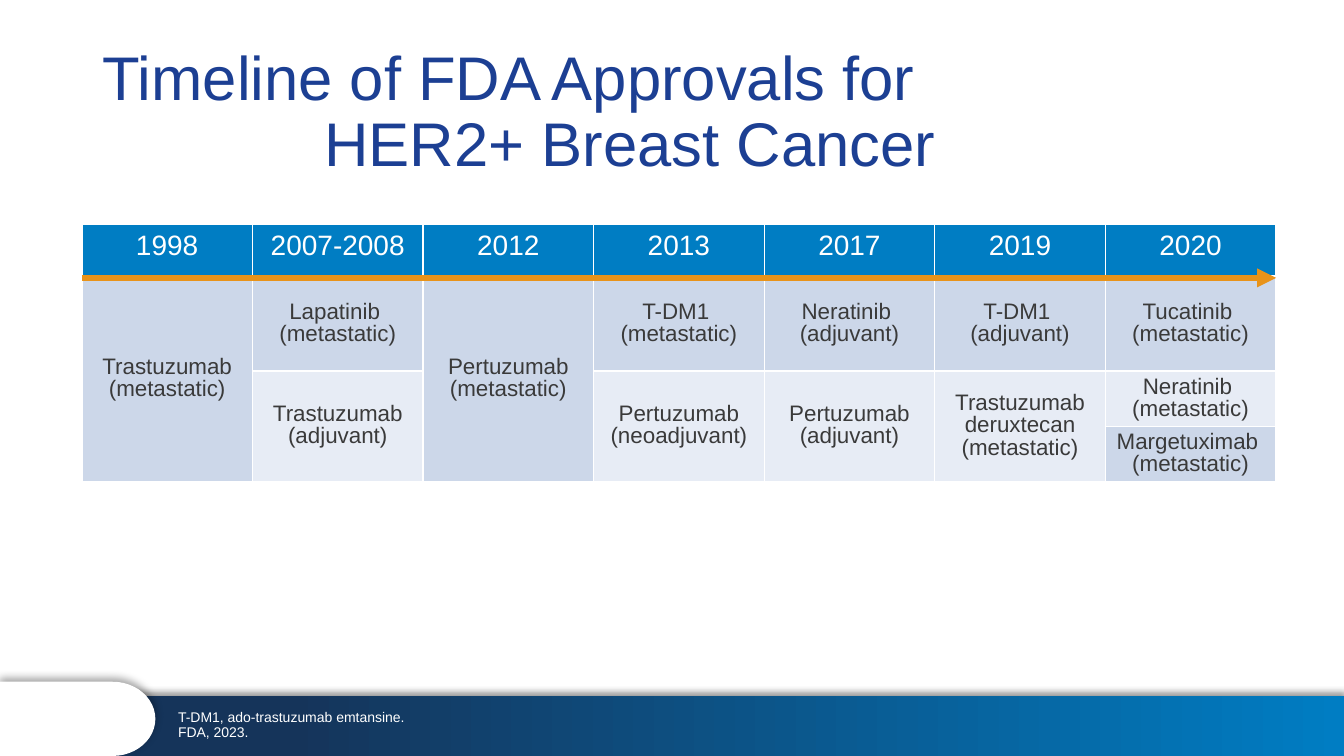
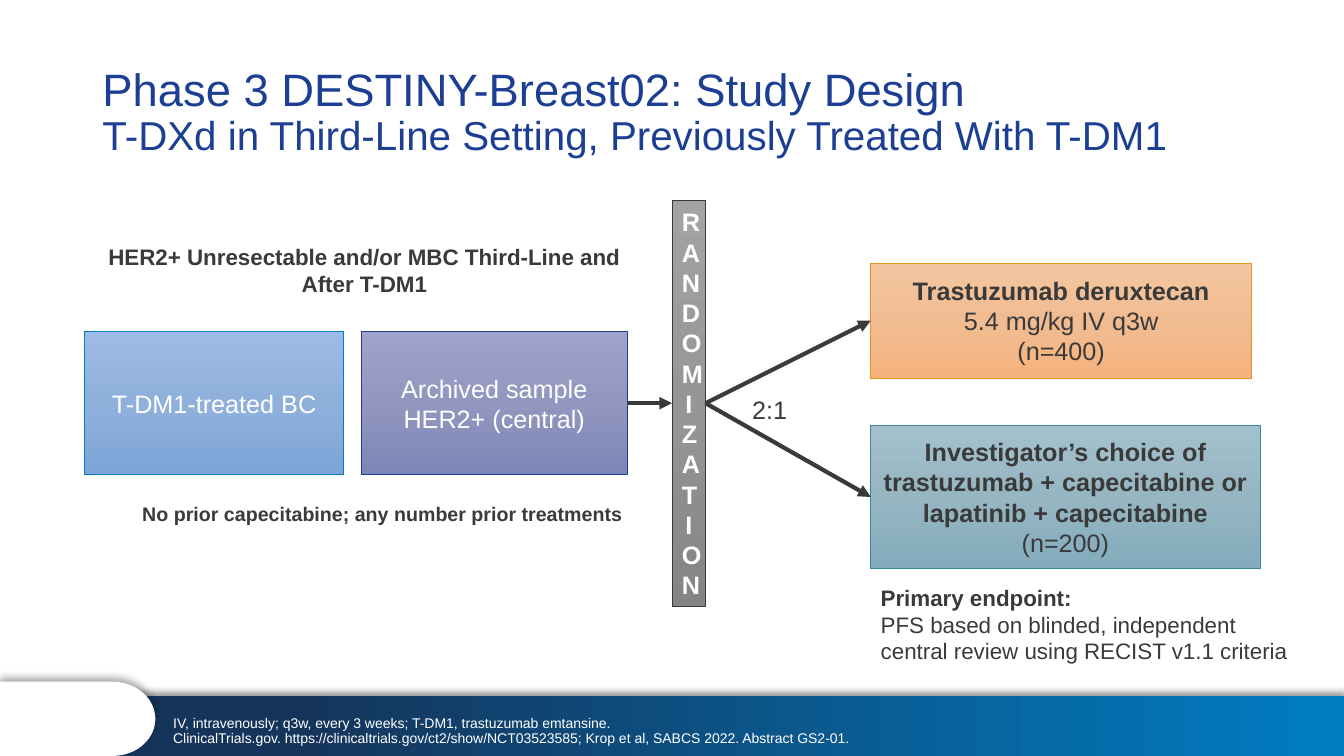
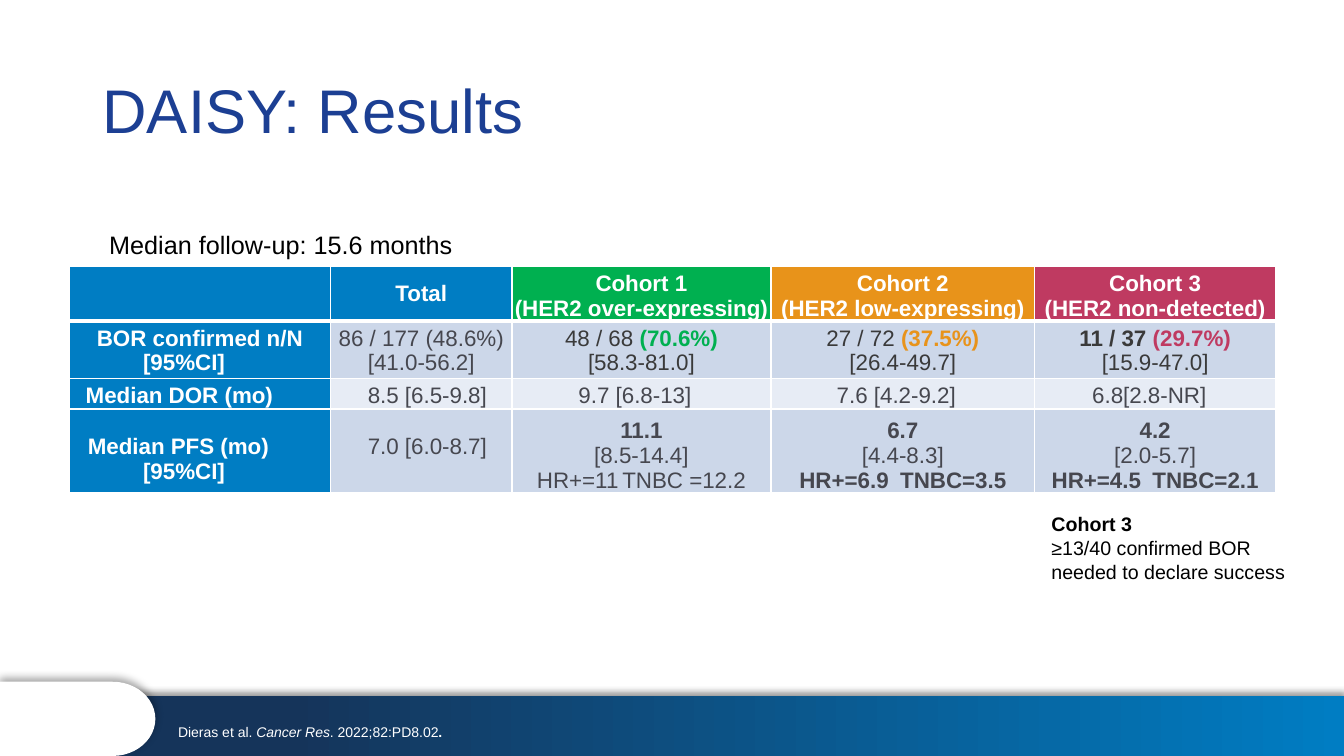
import copy
import math

import pptx
import pptx.dml.color
import pptx.enum.shapes
import pptx.enum.text
import pptx.oxml
import pptx.oxml.ns
import pptx.util

Pt = pptx.util.Pt
RGB = pptx.dml.color.RGBColor
ALIGN = pptx.enum.text.PP_ALIGN
ANCHOR = pptx.enum.text.MSO_ANCHOR
SHAPE = pptx.enum.shapes.MSO_SHAPE
qn = pptx.oxml.ns.qn

# Shared look
FONT = "Arial"
WHITE = RGB(0xFF, 0xFF, 0xFF)
BLACK = RGB(0x00, 0x00, 0x00)
DARK = RGB(0x3A, 0x3A, 0x3A)
SLATE = RGB(0x46, 0x47, 0x4F)
NAVY = RGB(0x1C, 0x3F, 0x93)
MIDNIGHT = RGB(0x15, 0x34, 0x5A)
BLUE = RGB(0x00, 0x7D, 0xC3)
ORANGE = RGB(0xE8, 0x93, 0x1A)
TEAL = RGB(0x3A, 0x86, 0x9B)
GREEN = RGB(0x00, 0xB0, 0x50)
ROSE = RGB(0xBF, 0x3A, 0x61)
ROW_DARK = RGB(0xCC, 0xD7, 0xE9)
ROW_LIGHT = RGB(0xE7, 0xEC, 0xF5)

# Top, middle and bottom colours of the study boxes
ORANGE_FADE = [RGB(0xF4, 0xC6, 0xA0), RGB(0xF1, 0xBC, 0x92), RGB(0xF5, 0xB3, 0x7D)]
TEAL_FADE = [RGB(0xA3, 0xC1, 0xCD), RGB(0x96, 0xB6, 0xC2), RGB(0x83, 0xAC, 0xBC)]
BLUE_FADE = [RGB(0x9D, 0xBB, 0xE5), RGB(0x90, 0xB0, 0xDC), RGB(0x7C, 0xA5, 0xD7)]
VIOLET_FADE = [RGB(0x9E, 0xA4, 0xC9), RGB(0x91, 0x97, 0xBE), RGB(0x7D, 0x85, 0xB7)]
GREY_FADE = [RGB(0xA3, 0xA3, 0xA3), RGB(0x96, 0x96, 0x96), RGB(0x84, 0x84, 0x84)]


def xml(tag, attrs="", inner=""):
    ns = pptx.oxml.ns.nsdecls("a")
    return pptx.oxml.parse_xml(f"<a:{tag} {ns} {attrs}>{inner}</a:{tag}>")


def points(values):
    return [Pt(v) for v in values]


# Text
def add_run(p, text, size, color, bold=False, italic=False):
    """Add text to a paragraph; a newline becomes a line break."""
    for i, part in enumerate(text.split("\n")):
        if i:
            p.add_line_break()
            br = p._p[-1]
        r = p.add_run()
        r.text = part
        r.font.name, r.font.size = FONT, Pt(size)
        r.font.bold, r.font.italic = bold, italic
        r.font.color.rgb = color
        if i:
            br.append(copy.deepcopy(r._r.rPr))


def indent(p, left, first=0):
    pPr = p._p.get_or_add_pPr()
    pPr.set("marL", str(Pt(left)))
    pPr.set("indent", str(Pt(first)))


def write(tf, paragraphs, size, color, align=ALIGN.LEFT, spacing=None, bold=False):
    """A paragraph is a string or a list of strings and (text, changes) runs."""
    for i, runs in enumerate(paragraphs):
        p = tf.paragraphs[0] if i == 0 else tf.add_paragraph()
        p.alignment = align
        if spacing:
            p.line_spacing = spacing
        for run in [runs] if isinstance(runs, str) else runs:
            text, changes = (run, {}) if isinstance(run, str) else run
            add_run(p, text, **{"size": size, "color": color, "bold": bold, **changes})


def add_text(s, at, paragraphs, size, color=DARK, align=ALIGN.LEFT, bold=False,
             inset=True, wrap=True):
    tf = s.shapes.add_textbox(*points(at)).text_frame
    tf.word_wrap = wrap
    if not inset:
        tf.margin_left = tf.margin_right = tf.margin_top = tf.margin_bottom = 0
    write(tf, paragraphs, size, color, align, bold=bold)


# Shapes and lines
def set_gradient(sp, stops, angle):
    inner = "".join(f'<a:gs pos="{pos * 1000}"><a:srgbClr val="{c}"/></a:gs>'
                    for pos, c in stops)
    grad = xml("gradFill", 'rotWithShape="1"',
               f'<a:gsLst>{inner}</a:gsLst><a:lin ang="{angle * 60000}" scaled="0"/>')
    sp.fill.background()
    spPr = sp.element.spPr
    spPr.replace(spPr.find(qn("a:noFill")), grad)


def set_upward_shadow(sp, blur, alpha):
    sp.shadow.inherit = False
    sp.element.spPr.find(qn("a:effectLst")).append(xml(
        "outerShdw",
        f'blurRad="{Pt(blur)}" dist="{Pt(3)}" dir="16200000" algn="b" rotWithShape="0"',
        f'<a:srgbClr val="000000"><a:alpha val="{alpha * 1000}"/></a:srgbClr>'))


def add_box(s, at, fade, edge, paragraphs, color=DARK, bold=False, side=7.2):
    sp = s.shapes.add_shape(SHAPE.RECTANGLE, *points(at))
    sp.shadow.inherit = False
    set_gradient(sp, zip((0, 50, 100), fade), 90)
    sp.line.color.rgb, sp.line.width = edge, Pt(0.5)
    tf = sp.text_frame
    tf.word_wrap = True
    tf.vertical_anchor = ANCHOR.MIDDLE
    tf.margin_left = tf.margin_right = Pt(side)
    write(tf, paragraphs, 18, color, ALIGN.CENTER, bold=bold)
    return sp


def add_arrow(s, start, end, color, width):
    c = s.shapes.add_connector(pptx.enum.shapes.MSO_CONNECTOR.STRAIGHT,
                               *points(start + end))
    c.line.color.rgb, c.line.width = color, Pt(width)
    spPr = c.element.spPr
    spPr.find(qn("a:ln")).append(xml("tailEnd", 'type="triangle"'))
    spPr.append(xml("effectLst"))
    return c


def join(s, left, right):
    """Arrow from the right side of one box to the left side of another."""
    c = add_arrow(s, (0, 0), (0, 0), DARK, 3)
    c.begin_connect(left, 3)
    c.end_connect(right, 1)


# Tables
def set_borders(cell, row):
    widths = {"lnL": 1, "lnR": 1, "lnT": 3 if row == 1 else 1, "lnB": 3 if row == 0 else 1}
    tcPr = cell._tc.get_or_add_tcPr()
    for i, (side, width) in enumerate(widths.items()):
        tcPr.insert(i, xml(side, f'w="{Pt(width)}"',
                           f'<a:solidFill><a:srgbClr val="{WHITE}"/></a:solidFill>'))


def add_table(s, left, top, widths, heights, fill_of):
    table = s.shapes.add_table(len(heights), len(widths), Pt(left), Pt(top),
                               Pt(sum(widths)), Pt(sum(heights))).table
    table.horz_banding = False
    for col, width in zip(table.columns, widths):
        col.width = Pt(width)
    for row, height in zip(table.rows, heights):
        row.height = Pt(height)
    for i in range(len(heights)):
        for j in range(len(widths)):
            cell = table.cell(i, j)
            cell.fill.solid()
            cell.fill.fore_color.rgb = fill_of(i, j)
            set_borders(cell, i)
    return table


# Layout, title and footnote
def prepare_layout(prs):
    layout = prs.slide_layouts[1]
    title, body, *extras = layout.placeholders
    for ph in extras:
        ph.element.getparent().remove(ph.element)
    for ph, at in ((title, (66, 29, 828, 104)), (body, (120, 497.5, 763, 35))):
        ph.left, ph.top, ph.width, ph.height = points(at)
    return layout


def add_band(s, layout):
    """Draw the footer band and its white tab, and hand them to the layout."""
    band = s.shapes.add_shape(SHAPE.RECTANGLE, *points((83, 497, 877, 43)))
    set_gradient(band, [(0, BLUE), (86, MIDNIGHT)], 180)
    set_upward_shadow(band, 4, 40)

    steps = 24
    angles = [math.pi * (i / steps - 0.5) for i in range(steps + 1)]
    curve = [(80.5 + 30.5 * math.cos(a), 513.5 + 26.5 * math.sin(a)) for a in angles]
    fb = s.shapes.build_freeform(0, Pt(487))
    fb.add_line_segments([points(xy) for xy in curve + [(0, 540)]], close=True)
    tab = fb.convert_to_shape()
    tab.fill.solid()
    tab.fill.fore_color.rgb = WHITE
    set_upward_shadow(tab, 6, 34)

    for i, sp in enumerate((band, tab)):
        sp.line.fill.background()
        layout.shapes.element.insert(2 + i, sp.element)


def add_slide(prs, layout, title, footnote):
    s = prs.slides.add_slide(layout)
    tf = s.shapes.title.text_frame
    tf.auto_size = pptx.enum.text.MSO_AUTO_SIZE.NONE
    tf.vertical_anchor = ANCHOR.MIDDLE
    write(tf, [title], 44, NAVY, spacing=0.9)

    tf = s.placeholders[1].text_frame
    tf.auto_size = pptx.enum.text.MSO_AUTO_SIZE.NONE
    tf.vertical_anchor = ANCHOR.BOTTOM
    write(tf, footnote, 10, WHITE, spacing=0.9)
    for p in tf.paragraphs:
        p.space_before = Pt(0)
        indent(p, 0)
        p._p.get_or_add_pPr().append(xml("buNone"))
    return s


# Slide 1
def fill_timeline(s):
    years = ["1998", "2007-2008", "2012", "2013", "2017", "2019", "2020"]
    # Approvals of each year, top to bottom
    approvals = [
        ["Trastuzumab (metastatic)"],
        ["Lapatinib \n(metastatic)", "Trastuzumab (adjuvant)"],
        ["Pertuzumab (metastatic)"],
        ["T-DM1 \n(metastatic)", "Pertuzumab (neoadjuvant)"],
        ["Neratinib \n(adjuvant)", "Pertuzumab (adjuvant)"],
        ["T-DM1 \n(adjuvant)", "Trastuzumab deruxtecan (metastatic)"],
        ["Tucatinib \n(metastatic)", "Neratinib \n(metastatic)",
         "Margetuximab \n(metastatic)"],
    ]
    fills = [BLUE, ROW_DARK, ROW_LIGHT, ROW_DARK]

    def fill_of(i, j):
        return fills[min(i, len(approvals[j]))]

    table = add_table(s, 58.5, 160.5, [121.86] * 7, [37, 67.5, 39.5, 38.5], fill_of)
    for j, (year, drugs) in enumerate(zip(years, approvals)):
        write(table.cell(0, j).text_frame, [year], 20, WHITE, ALIGN.CENTER)
        for i, drug in enumerate(drugs, 1):
            cell = table.cell(i, j)
            if i == len(drugs) and i < 3:
                cell.merge(table.cell(3, j))
            cell.vertical_anchor = ANCHOR.MIDDLE
            write(cell.text_frame, [drug], 16, DARK, ALIGN.CENTER, 0.9)
    add_arrow(s, (58.5, 198.5), (911.5, 198.5), ORANGE, 4.5)


# Slide 2
def fill_study_design(s):
    plain = {"bold": False}
    add_text(s, (94.5, 355, 361.5, 24.5),
             ["No prior capecitabine; any number prior treatments"], 14, bold=True)
    add_text(s, (65.5, 170, 389.5, 46),
             ["HER2+ Unresectable and/or MBC Third-Line and After T-DM1"], 16,
             align=ALIGN.CENTER, bold=True)
    add_text(s, (530, 278, 39.5, 29), ["2:1"], 18, align=ALIGN.CENTER, wrap=False)

    add_box(s, (60.5, 237, 185, 102), BLUE_FADE, BLUE, ["T-DM1-treated BC"], WHITE)
    sample = add_box(s, (258, 237, 190, 102), VIOLET_FADE, NAVY,
                     ["Archived sample HER2+ (central)"], WHITE)
    randomization = add_box(s, (480, 143, 24, 290), GREY_FADE, DARK,
                            list("RANDOMIZATION"), WHITE, bold=True)
    deruxtecan = add_box(s, (622, 188, 272, 82), ORANGE_FADE, ORANGE,
                         ["Trastuzumab deruxtecan",
                          [("5.4 mg/kg IV q3w\n(n=400)", plain)]], bold=True)
    choice = add_box(s, (622, 304, 278, 102), TEAL_FADE, TEAL,
                     ["Investigator’s choice of trastuzumab + capecitabine or",
                      "lapatinib + capecitabine", [("(n=200)", plain)]],
                     bold=True, side=3.6)
    join(s, sample, randomization)
    join(s, randomization, deruxtecan)
    join(s, randomization, choice)

    add_text(s, (622, 413.5, 307.5, 65.5),
             ["Primary endpoint:",
              [("PFS based on blinded, independent central review using "
                "RECIST v1.1 criteria", plain)]], 16, bold=True)


# Slide 3
def fill_results(s):
    heads = [BLUE, BLUE, GREEN, ORANGE, ROSE]

    def fill_of(i, j):
        if i == 0 or j == 0:
            return heads[j if i == 0 else 0]
        return ROW_LIGHT if i == 2 else ROW_DARK

    def strong(text, color=SLATE):
        return (text, {"bold": True, "color": color})

    def dark(text):
        return (text, {"color": DARK})

    rows = [
        [[], ["Total"], ["Cohort 1", "(HER2 over-expressing)"],
         ["Cohort 2", "(HER2 low-expressing)"], ["Cohort 3", "(HER2 non-detected)"]],
        [["BOR confirmed n/N [95%CI]"],
         ["86 / 177 (48.6%)", "[41.0-56.2]"],
         [[dark("48 / 68 "), strong("(70.6%)", GREEN)], [dark("[58.3-81.0]")]],
         [[dark("27 / 72 "), strong("(37.5%)", ORANGE)], [dark("[26.4-49.7]")]],
         [[strong("11 / 37 ", DARK), strong("(29.7%)", ROSE)], [dark("[15.9-47.0]")]]],
        [["Median DOR (mo)"], ["8.5 [6.5-9.8]"], ["9.7 [6.8-13]"], ["7.6 [4.2-9.2]"],
         ["6.8[2.8-NR]"]],
        [["Median PFS (mo) [95%CI]"], ["7.0 [6.0-8.7]"],
         [[strong("11.1")], "[8.5-14.4]", "HR+=11\tTNBC =12.2"],
         [[strong("6.7")], "[4.4-8.3]", [strong("HR+=6.9\tTNBC=3.5")]],
         [[strong("4.2")], "[2.0-5.7]", [strong("HR+=4.5\tTNBC=2.1")]]],
    ]
    # Left and first-line indents of the cells that are not centred
    indents = {(1, 0): (52.5, -33), (2, 0): (11.5, 0), (3, 0): (52.5, -39.5),
               (2, 1): (26.5, 0), (3, 1): (26.5, 0), (2, 2): (47.5, 0),
               (2, 3): (47, 0), (2, 4): (41, 0)}
    # Top margins other than the usual 3.6
    tops = {(0, 1): 10.8, (3, 0): 18, (3, 1): 18, (3, 2): 6.5, (3, 3): 6.5, (3, 4): 6.5}

    table = add_table(s, 49.7, 190, [186.5, 129.5, 185, 188.5, 172], [39, 41, 22, 59],
                      fill_of)
    for i, row in enumerate(rows):
        for j, paragraphs in enumerate(row):
            cell = table.cell(i, j)
            cell.margin_left = cell.margin_right = cell.margin_bottom = 0
            cell.margin_top = Pt(tops.get((i, j), 3.6))
            head = i == 0 or j == 0
            align = ALIGN.LEFT if (i, j) in indents else ALIGN.CENTER
            write(cell.text_frame, paragraphs, 16, WHITE if head else SLATE, align,
                  bold=head)
            for p in cell.text_frame.paragraphs:
                if (i, j) in indents:
                    indent(p, *indents[i, j])
                if "\t" in p.text:
                    p._p.get_or_add_pPr().append(
                        xml("tabLst", "", f'<a:tab pos="{Pt(61)}" algn="l"/>'))

    add_text(s, (78, 163.5, 292, 23), ["Median follow-up: 15.6 months"], 18, BLACK,
             inset=False)
    add_text(s, (751, 366, 171, 52),
             [[strong("Cohort 3", BLACK)], "≥13/40 confirmed BOR needed to declare success"],
             14, BLACK, inset=False)


def main():
    prs = pptx.Presentation()
    prs.slide_width, prs.slide_height = Pt(960), Pt(540)
    layout = prepare_layout(prs)

    s = add_slide(prs, layout, "Timeline of FDA Approvals for\nHER2+ Breast Cancer",
                  ["T-DM1, ado-trastuzumab emtansine.\nFDA, 2023."])
    indent(s.shapes.title.text_frame.paragraphs[0], 158.5, -158.5)
    add_band(s, layout)
    fill_timeline(s)

    s = add_slide(prs, layout,
                  [("Phase 3 DESTINY-Breast02: Study Design", {"size": 32.4}),
                   ("\nT-DXd in Third-Line Setting, Previously Treated With T-DM1",
                    {"size": 28.8})],
                  ["IV, intravenously; q3w, every 3 weeks; T-DM1, trastuzumab emtansine.",
                   "ClinicalTrials.gov. https://clinicaltrials.gov/ct2/show/NCT03523585; "
                   "Krop et al, SABCS 2022. Abstract GS2-01."])
    body = s.placeholders[1]
    body.left, body.top, body.width, body.height = points((116.5, 502, 672, 35))
    fill_study_design(s)

    s = add_slide(prs, layout, "DAISY: Results",
                  [["Dieras et al. ", ("Cancer Res", {"italic": True}),
                    ". 2022;82:PD8.02", (".", {"bold": True})]])
    fill_results(s)

    prs.save("out.pptx")


if __name__ == "__main__":
    main()
